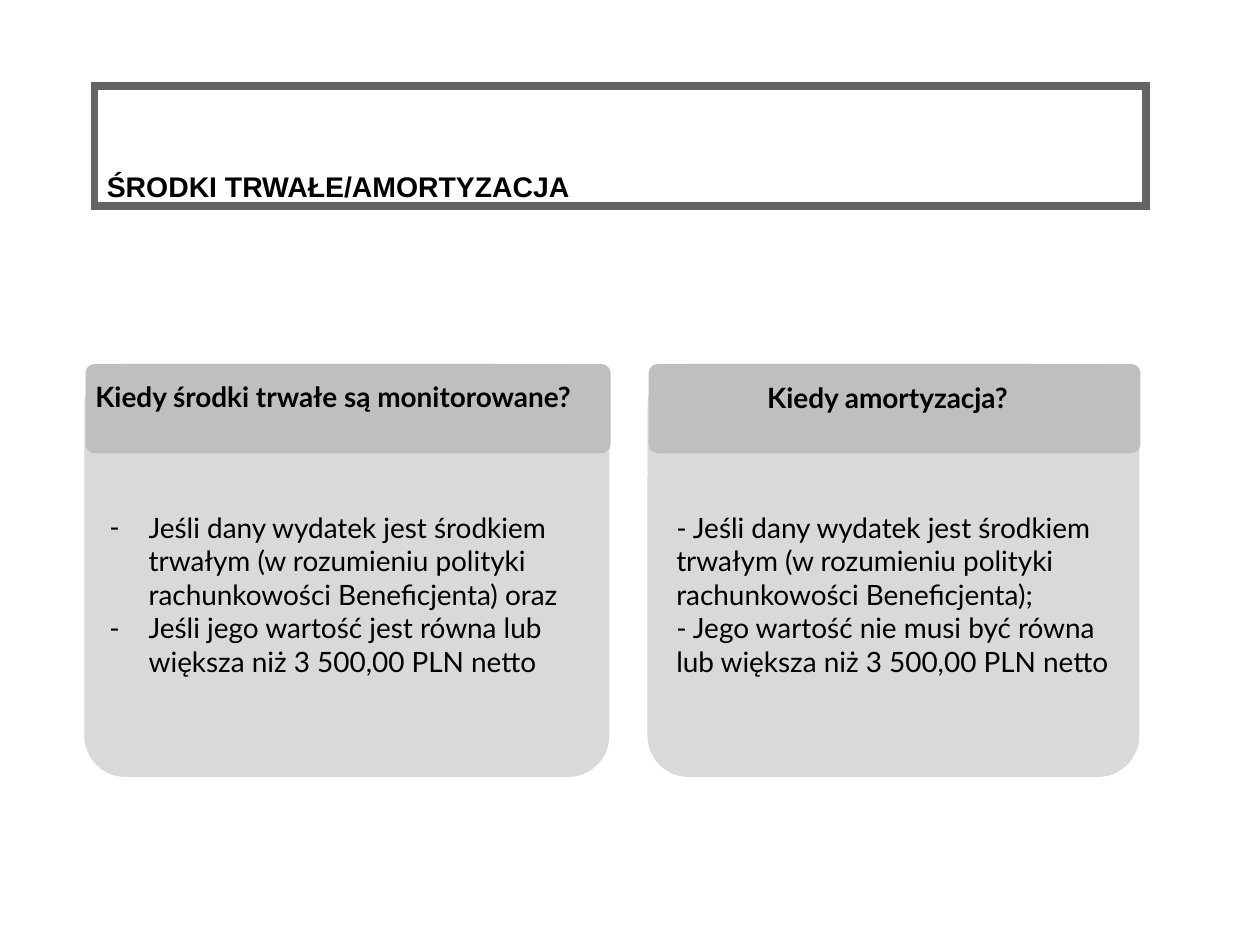
"""Builds a slide comparing monitored fixed assets with depreciation."""
import lxml.etree
import pptx
import pptx.dml.color
import pptx.enum.shapes
import pptx.enum.text
import pptx.oxml.ns
import pptx.util

Pt = pptx.util.Pt
SHAPES = pptx.enum.shapes.MSO_SHAPE
ALIGN = pptx.enum.text.PP_ALIGN


def colour(value):
    return pptx.dml.color.RGBColor.from_string(value)


def add_element(parent, tag, **attributes):
    lxml.etree.SubElement(parent, pptx.oxml.ns.qn(tag), attributes)


def write(para, text, *, font, size, bold=False, align=ALIGN.LEFT, raised=0):
    span = para.add_run()
    span.text = text
    para.alignment = align
    span.font.name = font
    span.font.size = Pt(size)
    span.font.bold = bold
    span.font.color.rgb = colour("000000")
    if raised:
        span.font._element.set("baseline", str(raised * 1000))


class Page:
    title_font = "Arial"
    body_font = "Lato"
    text_size = 16
    frame_colour = "636466"
    panel_colour = "D9D9D9"
    header_colour = "BFBFBF"
    indent = 22.5

    def __init__(self, deck):
        self.shapes = deck.slides.add_slide(deck.slide_layouts[6]).shapes

    def shape(self, kind, left, top, width, height):
        box = self.shapes.add_shape(kind, Pt(left), Pt(top), Pt(width), Pt(height))
        box.shadow.inherit = False
        return box

    def title(self, text, left, top, width, height):
        box = self.shape(SHAPES.RECTANGLE, left, top, width, height)
        box.fill.background()
        box.line.color.rgb = colour(self.frame_colour)
        box.line.width = Pt(4.5)
        add_element(box.line._get_or_add_ln(), "a:miter", lim="800000")
        frame = box.text_frame
        frame.vertical_anchor = pptx.enum.text.MSO_ANCHOR.TOP
        frame.margin_top, frame.margin_bottom = Pt(44), 0
        write(frame.paragraphs[0], text, font=self.title_font, size=28, bold=True, raised=30)

    def panel(self, left, top, width, height, fill):
        box = self.shape(SHAPES.ROUNDED_RECTANGLE, left, top, width, height)
        box.adjustments[0] = 0.1
        box.fill.solid()
        box.fill.fore_color.rgb = colour(fill)
        box.line.fill.background()

    def text(self, lines, left, top, width, height, *, dashed=False, **style):
        box = self.shapes.add_textbox(Pt(left), Pt(top), Pt(width), Pt(height))
        frame = box.text_frame
        frame.word_wrap = True
        for number, line in enumerate(lines):
            para = frame.add_paragraph() if number else frame.paragraphs[0]
            if dashed:
                self.dash(para)
            write(para, line, font=self.body_font, size=self.text_size, **style)

    def dash(self, para):
        properties = para._p.get_or_add_pPr()
        properties.set("marL", str(Pt(self.indent)))
        properties.set("indent", str(-Pt(self.indent)))
        add_element(properties, "a:buFont", typeface=self.body_font)
        add_element(properties, "a:buChar", char="-")

    def column(self, left, width, heading, heading_at, lines, body_at, dashed=False):
        self.panel(left, 208, width, 236, self.panel_colour)
        self.panel(left + 0.7, 208, width, 51, self.header_colour)
        self.text([heading], *heading_at, bold=True, align=ALIGN.CENTER)
        self.text(lines, *body_at, dashed=dashed)


def main():
    deck = pptx.Presentation()
    deck.slide_width, deck.slide_height = Pt(720), Pt(540)
    page = Page(deck)
    page.title("ŚRODKI TRWAŁE/AMORTYZACJA", 54, 49, 601, 68.5)
    page.column(
        48.2, 300, "Kiedy środki trwałe są monitorowane?", (41, 213.4, 299, 26.6),
        ["Jeśli dany wydatek jest środkiem trwałym (w rozumieniu polityki "
         "rachunkowości Beneficjenta) oraz",
         "Jeśli jego wartość jest równa lub większa niż 3 500,00 PLN netto"],
        (55.4, 288, 271.5, 124), dashed=True)
    page.column(
        370, 281, "Kiedy amortyzacja?", (371.5, 213.8, 271.5, 26.6),
        ["- Jeśli dany wydatek jest środkiem trwałym (w rozumieniu polityki "
         "rachunkowości Beneficjenta);",
         "- Jego wartość nie musi być równa lub większa niż 3 500,00 PLN netto"],
        (379.4, 288, 271.5, 104.4))
    deck.save("out.pptx")


if __name__ == "__main__":
    main()
